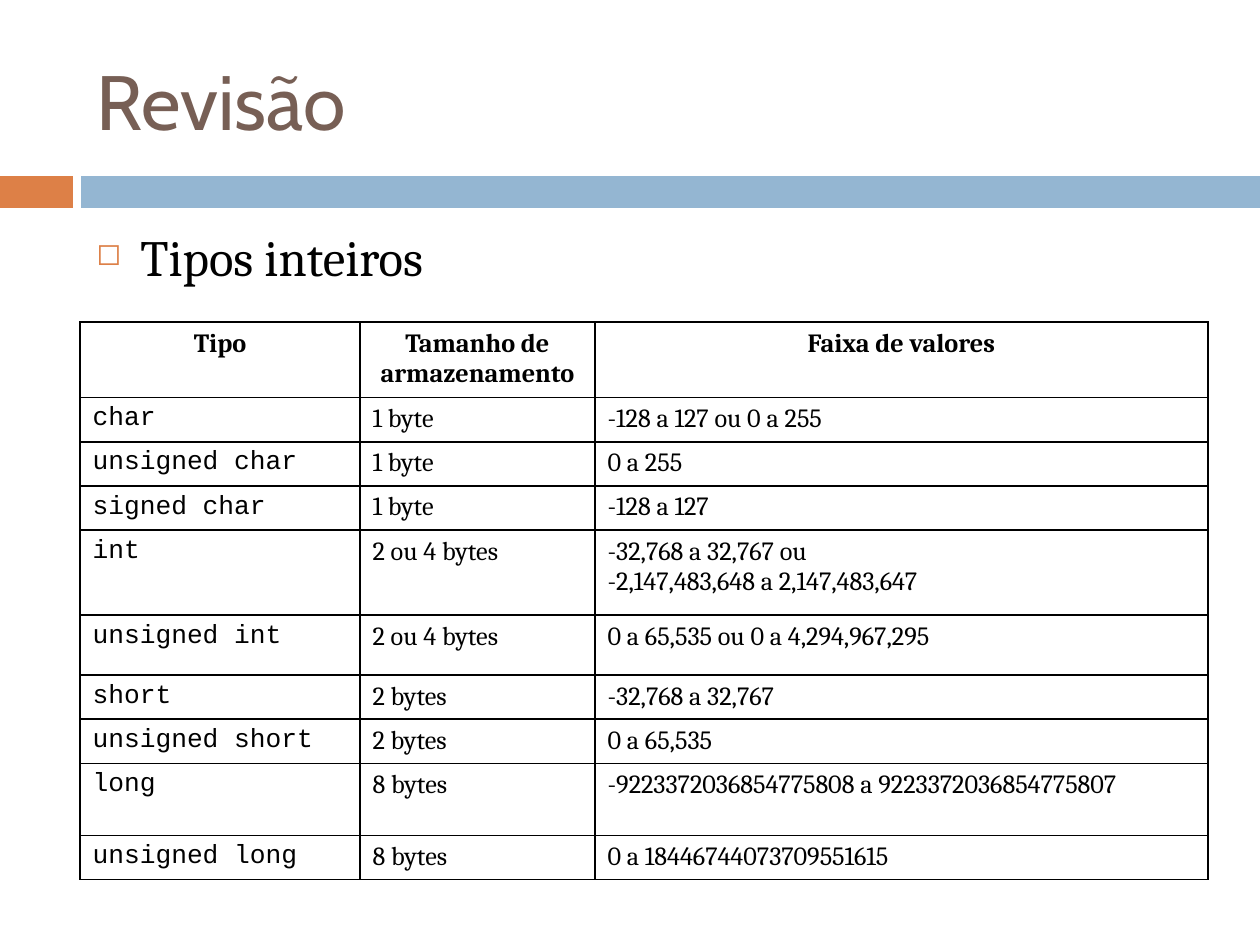
import pptx
import pptx.dml.color
import pptx.enum.shapes
import pptx.enum.text
import pptx.oxml
import pptx.oxml.ns
import pptx.util

RGBColor = pptx.dml.color.RGBColor
ALIGN = pptx.enum.text.PP_ALIGN
ANCHOR = pptx.enum.text.MSO_ANCHOR

ORANGE = RGBColor(0xDD, 0x80, 0x47)
BLUE = RGBColor(0x94, 0xB6, 0xD2)
BROWN = RGBColor(0x77, 0x5F, 0x55)
BLACK = RGBColor(0, 0, 0)

EMU_PER_PX = 914400 // 126
PAGE_WIDTH, PAGE_HEIGHT = 1260, 945

COLUMN_WIDTHS = [280, 235, 613]
ROW_HEIGHTS = [73, 43, 43, 43, 85, 60, 43, 43, 72, 42]
HEADER = ("Tipo", "Tamanho de armazenamento", "Faixa de valores")
INTEGER_TYPES = [
    ("char", "1 byte", "-128 a 127 ou 0 a 255"),
    ("unsigned char", "1 byte", "0 a 255"),
    ("signed char", "1 byte", "-128 a 127"),
    ("int", "2 ou 4 bytes", "-32,768 a 32,767 ou\n-2,147,483,648 a 2,147,483,647"),
    ("unsigned int", "2 ou 4 bytes", "0 a 65,535 ou 0 a 4,294,967,295"),
    ("short", "2 bytes", "-32,768 a 32,767"),
    ("unsigned short", "2 bytes", "0 a 65,535"),
    ("long", "8 bytes", "-9223372036854775808 a 9223372036854775807"),
    ("unsigned long", "8 bytes", "0 a 18446744073709551615"),
]


def px(length):
    return pptx.util.Emu(length * EMU_PER_PX)


def emu_box(box):
    return [px(length) for length in box]


def set_font(para, name, size, color, bold=False):
    para.font.name = name
    para.font.size = pptx.util.Pt(size)
    para.font.color.rgb = color
    para.font.bold = bold


def add_title(page, box, text):
    title = page.shapes.title
    title.left, title.top, title.width, title.height = emu_box(box)
    frame = title.text_frame
    frame.text = text
    frame.vertical_anchor = ANCHOR.MIDDLE
    frame.auto_size = pptx.enum.text.MSO_AUTO_SIZE.NONE
    para = frame.paragraphs[0]
    para.alignment = ALIGN.LEFT
    set_font(para, "Cabin", 44, BROWN)


def add_divider(page, box):
    """Draw a short orange bar and a long blue bar with a gap between them."""
    left, top, width, height = box
    short, gap = 73, 8
    long_start = short + gap
    for offset, length, color in ((0, short, ORANGE), (long_start, width - long_start, BLUE)):
        bar = page.shapes.add_shape(
            pptx.enum.shapes.MSO_SHAPE.RECTANGLE, *emu_box((left + offset, top, length, height)))
        bar.shadow.inherit = False
        bar.fill.solid()
        bar.fill.fore_color.rgb = color
        bar.line.fill.background()


def add_bullet(page, box, text):
    frame = page.shapes.add_textbox(*emu_box(box)).text_frame
    frame.word_wrap = True
    para = frame.paragraphs[0]
    para.text = text
    para.space_before = pptx.util.Pt(7)
    set_font(para, "Cambria", 29, BLACK)
    properties = para._p.get_or_add_pPr()
    properties.set("marL", str(px(44)))
    properties.set("indent", str(px(-44)))
    namespace = pptx.oxml.ns.nsdecls("a")
    for markup in (f'<a:buClr {namespace}><a:srgbClr val="{ORANGE}"/></a:buClr>',
                   f'<a:buSzPct {namespace} val="60000"/>',
                   f'<a:buChar {namespace} char="◻"/>'):
        properties.insert_element_before(
            pptx.oxml.parse_xml(markup), "a:tabLst", "a:defRPr", "a:extLst")


def set_borders(cell):
    properties = cell._tc.get_or_add_tcPr()
    for index, side in enumerate(("lnL", "lnR", "lnT", "lnB")):
        properties.insert(index, pptx.oxml.parse_xml(
            f'<a:{side} {pptx.oxml.ns.nsdecls("a")} w="12700"><a:solidFill>'
            f'<a:srgbClr val="{BLACK}"/></a:solidFill></a:{side}>'))


def add_type_table(page, left, top):
    rows = [HEADER, *INTEGER_TYPES]
    box = (left, top, sum(COLUMN_WIDTHS), sum(ROW_HEIGHTS))
    table = page.shapes.add_table(len(rows), len(HEADER), *emu_box(box)).table
    table.first_row = table.horz_banding = False
    for column, width in zip(table.columns, COLUMN_WIDTHS):
        column.width = px(width)
    for row, height in zip(table.rows, ROW_HEIGHTS):
        row.height = px(height)
    for row_index, texts in enumerate(rows):
        is_header = row_index == 0
        for column_index, text in enumerate(texts):
            cell = table.cell(row_index, column_index)
            cell.text = text
            cell.fill.background()
            set_borders(cell)
            is_code = column_index == 0 and not is_header
            for para in cell.text_frame.paragraphs:
                para.alignment = ALIGN.CENTER if is_header else ALIGN.LEFT
                set_font(para, "Courier New" if is_code else "Cambria", 15, BLACK, is_header)


def main():
    deck = pptx.Presentation()
    deck.slide_width, deck.slide_height = px(PAGE_WIDTH), px(PAGE_HEIGHT)
    page = deck.slides.add_slide(deck.slide_layouts[5])
    add_divider(page, (0, 176, PAGE_WIDTH, 32))
    add_title(page, (84, 32, 1124, 136), "Revisão")
    add_bullet(page, (84, 220, 1124, 90), "Tipos inteiros")
    add_type_table(page, 80, 322)
    deck.save("out.pptx")


if __name__ == "__main__":
    main()
